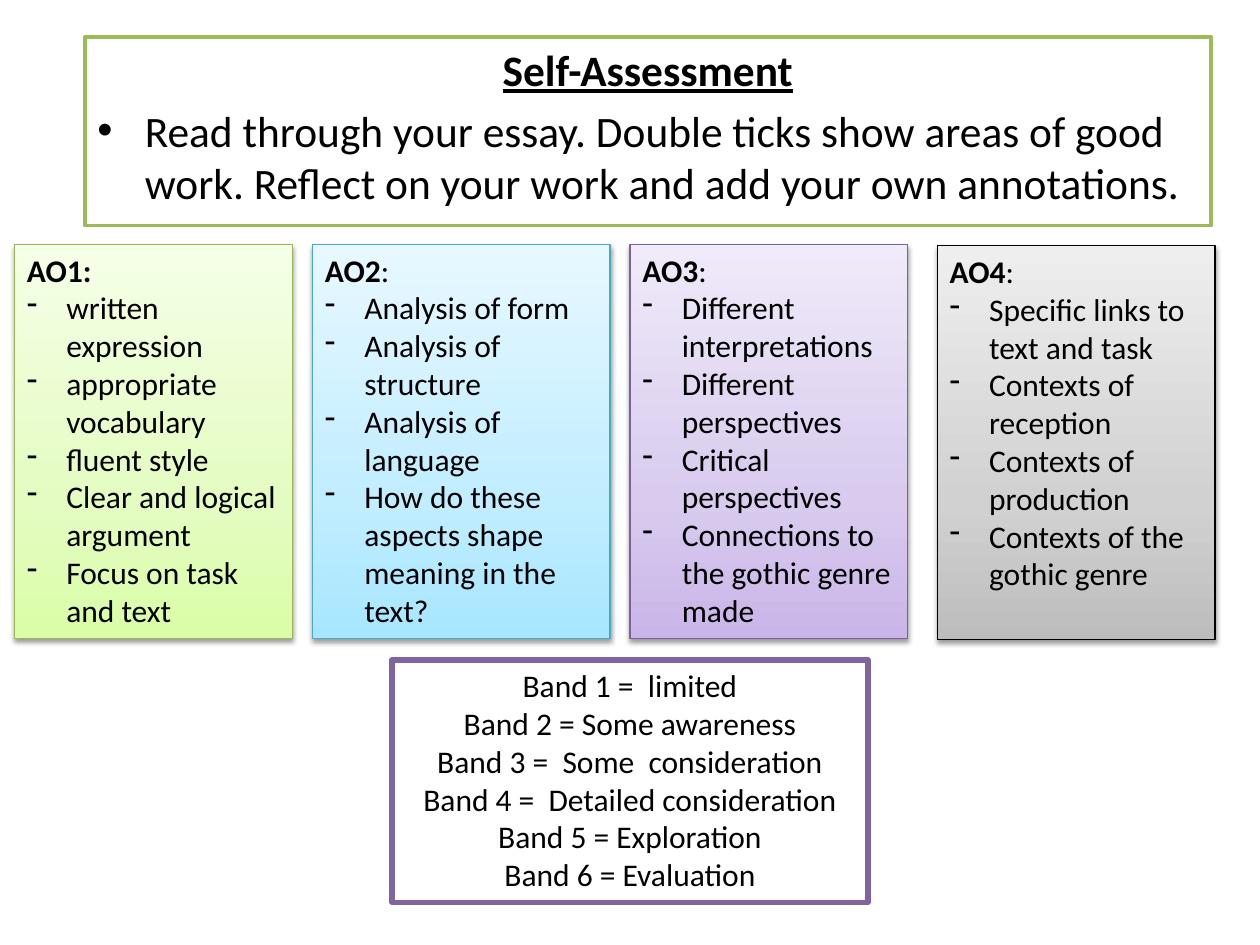
"""Build the self-assessment slide with four objectives and a band key."""
from lxml.etree import SubElement
from pptx import Presentation
from pptx.dml.color import RGBColor
from pptx.enum.text import MSO_ANCHOR, MSO_AUTO_SIZE, PP_ALIGN
from pptx.oxml import parse_xml
from pptx.oxml.ns import nsdecls, qn
from pptx.util import Pt


def color(text):
    return RGBColor.from_string(text)


def write(p, text, size=18, bold=False, underline=False, align=PP_ALIGN.LEFT,
          before=0, indent=0, bullet=None):
    p.alignment = align
    p.space_before = Pt(before)
    pPr = p._p.get_or_add_pPr()
    pPr.set("marL", str(Pt(indent)))
    pPr.set("indent", str(-Pt(indent)))
    for old in pPr.findall(qn("a:buChar")) + pPr.findall(qn("a:buNone")):
        pPr.remove(old)
    if bullet:
        SubElement(pPr, qn("a:buChar")).set("char", bullet)
    else:
        SubElement(pPr, qn("a:buNone"))
    r = p.add_run()
    r.text = text
    r.font.name = "Calibri"
    r.font.size = Pt(size)
    r.font.bold = bold
    r.font.underline = underline
    r.font.color.rgb = color("000000")


prs = Presentation()
prs.slide_width, prs.slide_height = Pt(720), Pt(540)
s = prs.slides.add_slide(prs.slide_layouts[1])
title = s.shapes.title._element
title.getparent().remove(title)

sp = s.placeholders[1]
sp.left, sp.top, sp.width, sp.height = Pt(48.5), Pt(21), Pt(643.5), Pt(108)
sp.fill.solid()
sp.fill.fore_color.rgb = color("FFFFFF")
sp.line.color.rgb = color("9BBB59")
sp.line.width = Pt(2)
tf = sp.text_frame
tf.word_wrap = True
tf.auto_size = MSO_AUTO_SIZE.NONE
tf.vertical_anchor = MSO_ANCHOR.TOP
write(tf.paragraphs[0], "Self-Assessment", size=24.8, bold=True, underline=True,
      align=PP_ALIGN.CENTER, before=5)
write(tf.add_paragraph(), "Read through your essay. Double ticks show areas of good work. "
      "Reflect on your work and add your own annotations.",
      size=24.8, before=5, indent=27, bullet="•")

objectives = [
    ("AO1", 8.3, 139.7, 159, "98B955", ("DAFDA7", "E4FCC2", "F5FFE7"),
     ["written expression", "appropriate  vocabulary", "fluent style",
      "Clear and logical argument", "Focus on task and text"]),
    ("AO2", 178.6, 139.7, 170, "46AAC5", ("A7E6FF", "C1EDFF", "E7F8FF"),
     ["Analysis of form", "Analysis of structure", "Analysis of language",
      "How do these aspects shape meaning in the text?"]),
    ("AO3", 360, 139.7, 158.7, "7D60A0", ("C9B5E8", "D8CBEE", "F0EAF9"),
     ["Different interpretations", "Different perspectives", "Critical perspectives",
      "Connections to the gothic genre made"]),
    ("AO4", 535.6, 140.4, 158.7, "000000", ("BDBDBD", "D1D1D1", "EEEEEE"),
     ["Specific links to text and task", "Contexts of reception",
      "Contexts of production", "Contexts of the gothic genre"]),
]
for name, left, top, width, edge, shades, points in objectives:
    sp = s.shapes.add_textbox(Pt(left), Pt(top), Pt(width), Pt(225.2))
    sp.fill.gradient()
    sp.fill.gradient_angle = 90
    stops = sp._element.spPr.find(qn("a:gradFill")).find(qn("a:gsLst"))
    for old in list(stops):
        stops.remove(old)
    for pos, shade in zip((0, 35, 100), shades):
        gs = SubElement(stops, qn("a:gs"), pos=str(pos * 1000))
        SubElement(gs, qn("a:srgbClr"), val=shade)
    sp.line.color.rgb = color(edge)
    sp.line.width = Pt(0.75)
    sp._element.spPr.append(parse_xml(
        f'<a:effectLst {nsdecls("a")}><a:outerShdw blurRad="{Pt(3.1)}" dist="{Pt(1.6)}" '
        'dir="5400000" rotWithShape="0"><a:srgbClr val="000000"><a:alpha val="38000"/>'
        '</a:srgbClr></a:outerShdw></a:effectLst>'))
    tf = sp.text_frame
    tf.word_wrap = True
    p = tf.paragraphs[0]
    write(p, name, bold=True)
    write(p, ":", bold=name == "AO1")
    for point in points:
        write(tf.add_paragraph(), point, indent=22.5, bullet="-")

sp = s.shapes.add_textbox(Pt(224), Pt(377.2), Pt(272), Pt(138.4))
sp.fill.solid()
sp.fill.fore_color.rgb = color("FFFFFF")
sp.line.color.rgb = color("8064A2")
sp.line.width = Pt(3)
tf = sp.text_frame
tf.word_wrap = True
bands = ["Band 1 =  limited", "Band 2 = Some awareness", "Band 3 =  Some  consideration",
         "Band 4 =  Detailed consideration", "Band 5 = Exploration", "Band 6 = Evaluation"]
for i, band in enumerate(bands):
    p = tf.add_paragraph() if i else tf.paragraphs[0]
    write(p, band, align=PP_ALIGN.CENTER)

prs.save("out.pptx")
